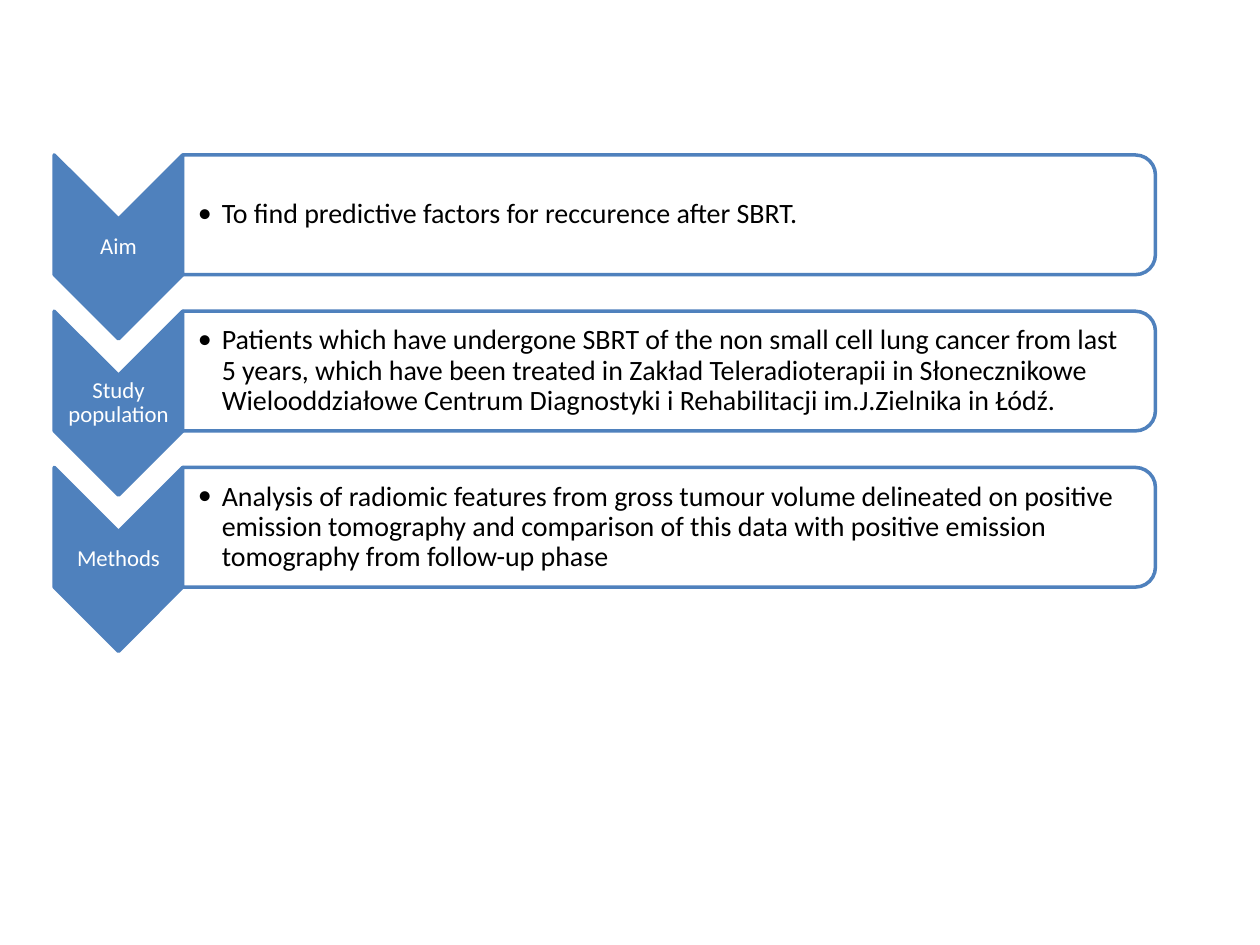
from lxml import etree
from pptx import Presentation
from pptx.dml.color import RGBColor
from pptx.enum.shapes import MSO_SHAPE
from pptx.enum.text import MSO_ANCHOR, PP_ALIGN
from pptx.oxml.ns import qn
from pptx.util import Inches, Pt

CHEVRON = MSO_SHAPE.CHEVRON
ROUNDED_END = MSO_SHAPE.ROUND_2_SAME_RECTANGLE
MIDDLE = MSO_ANCHOR.MIDDLE
CENTER, LEFT = PP_ALIGN.CENTER, PP_ALIGN.LEFT

COLORS = {"blue": "4F81BD", "white": "FFFFFF", "black": "000000"}
LABEL_FONT = {"name": "Calibri", "size": Pt(13)}
DETAIL_FONT = {"name": "Calibri", "size": Pt(16)}
LABEL_FRAME = {"margin_left": Inches(0.01), "margin_right": Inches(0.01)}
DETAIL_FRAME = {"margin_left": Inches(0.12), "margin_right": Inches(0.15)}
SHARED_FRAME = {
    "margin_top": Inches(0.01),
    "margin_bottom": Inches(0.01),
    "word_wrap": True,
    "vertical_anchor": MIDDLE,
}

STEPS = [
    ("Aim", "To find predictive factors for reccurence after SBRT."),
    (
        "Study population",
        "Patients which have undergone SBRT of the non small cell lung cancer "
        "from last 5 years, which have been treated in Zakład Teleradioterapii "
        "in Słonecznikowe Wielooddziałowe Centrum Diagnostyki i Rehabilitacji "
        "im.J.Zielnika in Łódź.",
    ),
    (
        "Methods",
        "Analysis of radiomic features from gross tumour volume delineated on "
        "positive emission tomography and comparison of this data with positive "
        "emission tomography from follow-up phase",
    ),
]


def apply_format(target, values):
    for name, value in values.items():
        setattr(target, name, value)


def add_turned_shape(slide, kind, left, top, width, height, fill):
    shape = slide.shapes.add_shape(
        kind,
        Inches(left + (width - height) / 2),
        Inches(top + (height - width) / 2),
        Inches(height),
        Inches(width),
    )
    shape.rotation = 90
    shape.shadow.inherit = False
    shape.fill.solid()
    shape.fill.fore_color.rgb = RGBColor.from_string(COLORS[fill])
    shape.line.color.rgb = RGBColor.from_string(COLORS["blue"])
    shape.line.width = Pt(2)
    return shape


def add_text(slide, text, left, top, width, height, frame_format, font, color, align):
    box = slide.shapes.add_textbox(
        Inches(left), Inches(top), Inches(width), Inches(height)
    )
    frame = box.text_frame
    apply_format(frame, {**SHARED_FRAME, **frame_format})
    paragraph = frame.paragraphs[0]
    apply_format(paragraph, {"alignment": align, "line_spacing": 0.9})
    run = paragraph.add_run()
    run.text = text
    apply_format(run.font, font)
    run.font.color.rgb = RGBColor.from_string(COLORS[color])
    return paragraph


def add_bullet(paragraph):
    properties = paragraph._p.get_or_add_pPr()
    properties.set("marL", str(Inches(0.19)))
    properties.set("indent", str(Inches(-0.19)))
    etree.SubElement(properties, qn("a:buFont")).set("typeface", "Calibri")
    etree.SubElement(properties, qn("a:buChar")).set("char", "•")


def add_step(slide, label, detail, left, top, width, height):
    label_width, panel_height = 1.02, 0.95
    panel_left = left + label_width
    panel_width = width - label_width

    add_turned_shape(slide, CHEVRON, left, top, label_width, height, "blue")
    add_text(slide, label, left, top + 0.51, label_width, 0.44,
             LABEL_FRAME, LABEL_FONT, "white", CENTER)

    panel = add_turned_shape(slide, ROUNDED_END, panel_left, top,
                             panel_width, panel_height, "white")
    panel_color = panel.fill._xPr.find(qn("a:solidFill"))[0]
    etree.SubElement(panel_color, qn("a:alpha")).set("val", "90000")
    add_bullet(add_text(slide, detail, panel_left, top + 0.05, panel_width - 0.04,
                        panel_height - 0.1, DETAIL_FRAME, DETAIL_FONT, "black", LEFT))


def add_study_plan(slide, left, top, width, pitch, step_height):
    for index, (label, detail) in enumerate(STEPS):
        add_step(slide, label, detail, left, top + index * pitch, width, step_height)


def main():
    presentation = Presentation()
    presentation.slide_width = Inches(10)
    presentation.slide_height = Inches(7.5)
    slide = presentation.slides.add_slide(presentation.slide_layouts[6])
    add_study_plan(slide, left=0.43, top=1.23, width=8.74, pitch=1.24, step_height=1.46)
    presentation.save("out.pptx")


if __name__ == "__main__":
    main()
